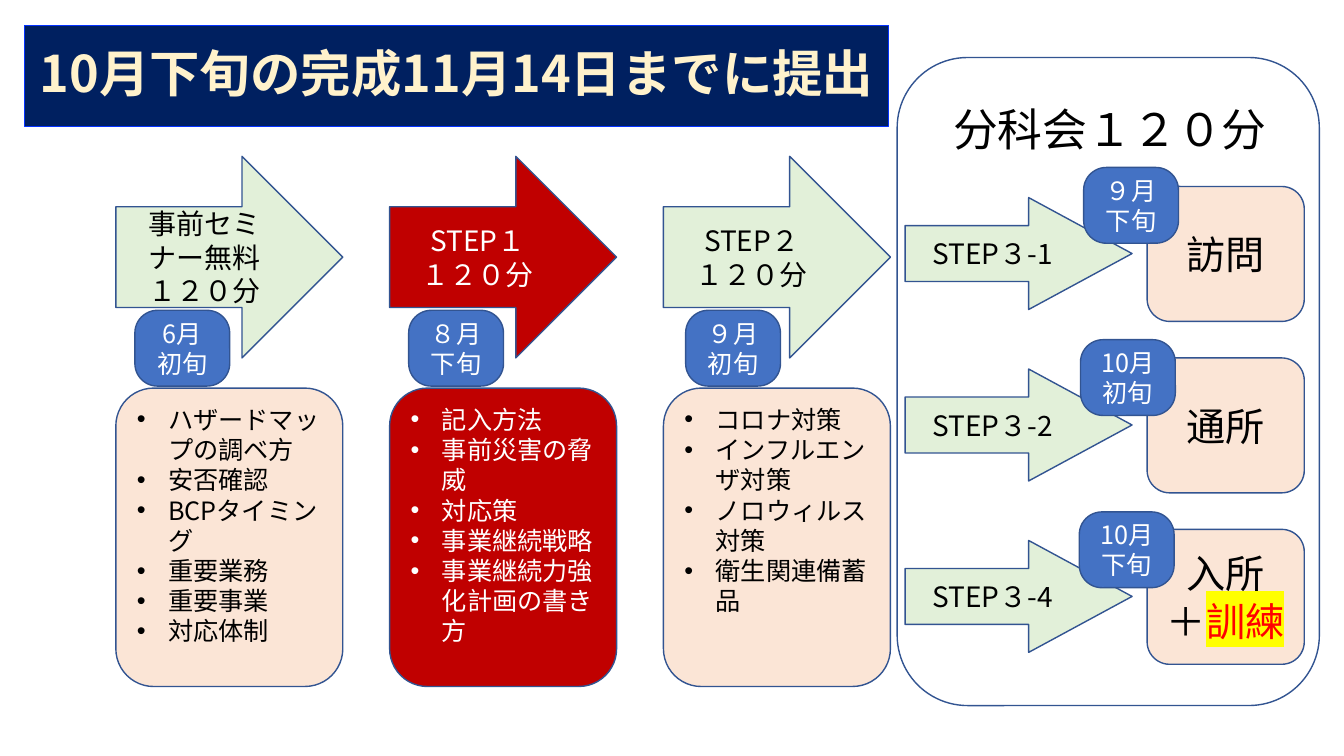
from dataclasses import dataclass

from lxml.etree import SubElement as Sub
from pptx import Presentation
from pptx.dml.color import RGBColor as Rgb
from pptx.enum.shapes import MSO_SHAPE as Kind
from pptx.enum.text import MSO_ANCHOR as Anchor, MSO_AUTO_SIZE as Fit, PP_ALIGN as Align
from pptx.oxml.ns import qn
from pptx.util import Cm, Pt


@dataclass(frozen=True)
class Theme:
    """Colours, font and type sizes of the slide."""
    font: str = "Noto Sans CJK JP"
    navy: str = "002060"
    rim: str = "0432FF"
    cream: str = "FFF2CC"
    green: str = "E2F0D9"
    peach: str = "FBE5D6"
    red: str = "C00000"
    blue: str = "4472C4"
    edge: str = "325491"
    black: str = "000000"
    white: str = "FFFFFF"
    alert: str = "FF0000"
    mark: str = "FFFF00"
    title: int = 36
    head: int = 32
    room: int = 28
    step: int = 20
    note: int = 18


LOOK = Theme()
PLAN = [
    (["事前セミナー無料", "１２０分"], "6月初旬", 0.48, LOOK.green, LOOK.peach, LOOK.black,
     ["ハザードマップの調ベ方", "安否確認", "BCPタイミング", "重要業務", "重要事業", "対応体制"]),
    (["STEP１", "１２０分"], "８月下旬", 0.48, LOOK.red, LOOK.red, LOOK.white,
     ["記入方法", "事前災害の脅威", "対応策", "事業継続戦略", "事業継続力強化計画の書き方"]),
    (["STEP２", "１２０分"], "９月初旬", 0.56, LOOK.green, LOOK.peach, LOOK.black,
     ["コロナ対策", "インフルエンザ対策", "ノロウィルス対策", "衛生関連備蓄品"]),
]
ROOMS = [
    ("STEP３-1", ["訪問"], "９月下旬", 27.31),
    ("STEP３-2", ["通所"], "10月初旬", 27.23),
    ("STEP３-4", ["入所", "＋"], "10月下旬", 27.2),
]


def style(font, size, tone):
    """Set face, size and colour of a font."""
    font.name, font.size = LOOK.font, Pt(size)
    font.color.rgb = Rgb.from_string(tone)
    Sub(font._element, qn("a:ea"), typeface=LOOK.font)


def paint(shape, fill, line, width=1):
    """Set the fill and outline of a shape."""
    if fill:
        shape.fill.solid()
        shape.fill.fore_color.rgb = Rgb.from_string(fill)
    else:
        shape.fill.background()
    shape.line.color.rgb = Rgb.from_string(line)
    shape.line.width = Pt(width)


def write(frame, lines, size, tone, align=Align.CENTER, dots=False):
    """Fill a text frame with one paragraph per line."""
    for i, line in enumerate(lines):
        para = frame.add_paragraph() if i else frame.paragraphs[0]
        para.text, para.alignment = line, align
        if dots:
            props = para._p.get_or_add_pPr()
            props.set("marL", str(Cm(0.79)))
            props.set("indent", str(-Cm(0.79)))
            Sub(props, qn("a:buFont"), typeface="Arial")
            Sub(props, qn("a:buChar"), char="•")
        style(para.font, size, tone)


def block(slide, kind, at, fill, lines=(), size=LOOK.note, tone=LOOK.black, adj=(), dots=False):
    """Add an outlined shape with its text."""
    shape = slide.shapes.add_shape(kind, *map(Cm, at))
    shape.shadow.inherit = False
    paint(shape, fill, LOOK.edge)
    for i, value in enumerate(adj):
        shape.adjustments[i] = value
    frame = shape.text_frame
    frame.word_wrap = True
    frame.vertical_anchor = Anchor.TOP if dots else Anchor.MIDDLE
    write(frame, lines, size, tone, Align.LEFT if dots else Align.CENTER, dots)
    return shape


def badge(slide, left, top, date):
    """Add a blue date badge."""
    block(slide, Kind.ROUNDED_RECTANGLE, (left, top, 2.39, 1.91), LOOK.blue,
          [date], LOOK.note, LOOK.white, [0.298])


def banner(slide, text):
    """Format the title placeholder as a navy banner."""
    title = slide.shapes.title
    title.left, title.top, title.width, title.height = map(Cm, (0.61, 0.64, 21.79, 2.54))
    paint(title, LOOK.navy, LOOK.rim, 0.75)
    frame = title.text_frame
    frame.auto_size, frame.vertical_anchor = Fit.NONE, Anchor.MIDDLE
    write(frame, [text], LOOK.title, LOOK.cream)
    para = frame.paragraphs[0]
    para.line_spacing, para.font.bold = 0.9, True


def heading(slide, text):
    """Add the heading of the panel."""
    box = slide.shapes.add_textbox(*map(Cm, (23.77, 2.44, 8.48, 1.63)))
    frame = box.text_frame
    frame.word_wrap, frame.auto_size = False, Fit.SHAPE_TO_FIT_TEXT
    write(frame, [text], LOOK.head, LOOK.black, Align.LEFT)


def accent(shape, text):
    """Add a highlighted run to the last paragraph of a shape."""
    run = shape.text_frame.paragraphs[-1].add_run()
    run.text = text
    run.font.color.rgb = Rgb.from_string(LOOK.alert)
    glow = Sub(run.font._element, qn("a:highlight"))
    Sub(glow, qn("a:srgbClr"), val=LOOK.mark)


def main():
    """Build and save the slide."""
    deck = Presentation()
    deck.slide_width, deck.slide_height = Cm(33.87), Cm(19.05)
    slide = deck.slides.add_slide(deck.slide_layouts[5])
    banner(slide, "10月下旬の完成11月14日までに提出")
    for i, (step, date, shift, fill, card, tone, items) in enumerate(PLAN):
        left = 2.92 + 6.9 * i
        block(slide, Kind.RIGHT_ARROW, (left, 3.94, 5.72, 5.08), fill, step, LOOK.step, tone)
        block(slide, Kind.ROUNDED_RECTANGLE, (left, 9.78, 5.72, 7.52), card, items,
              LOOK.note, tone, dots=True)
        badge(slide, left + shift, 7.82, date)
    for i, (step, room, date, left) in enumerate(ROOMS):
        drop = 4.32 * i
        block(slide, Kind.RIGHT_ARROW, (22.81, 4.98 + drop, 5.72, 2.82), LOOK.green,
              [step], LOOK.step, adj=[0.5, 0.924])
        place = block(slide, Kind.ROUNDED_RECTANGLE, (28.91, 4.7 + drop, 3.96, 3.4),
                      LOOK.peach, room, LOOK.room)
        badge(slide, left, 4.22 + 4.34 * i, date)
    accent(place, "訓練")
    block(slide, Kind.ROUNDED_RECTANGLE, (22.61, 1.45, 10.64, 16.33), None)
    heading(slide, "分科会１２０分")
    deck.save("out.pptx")


if __name__ == "__main__":
    main()
